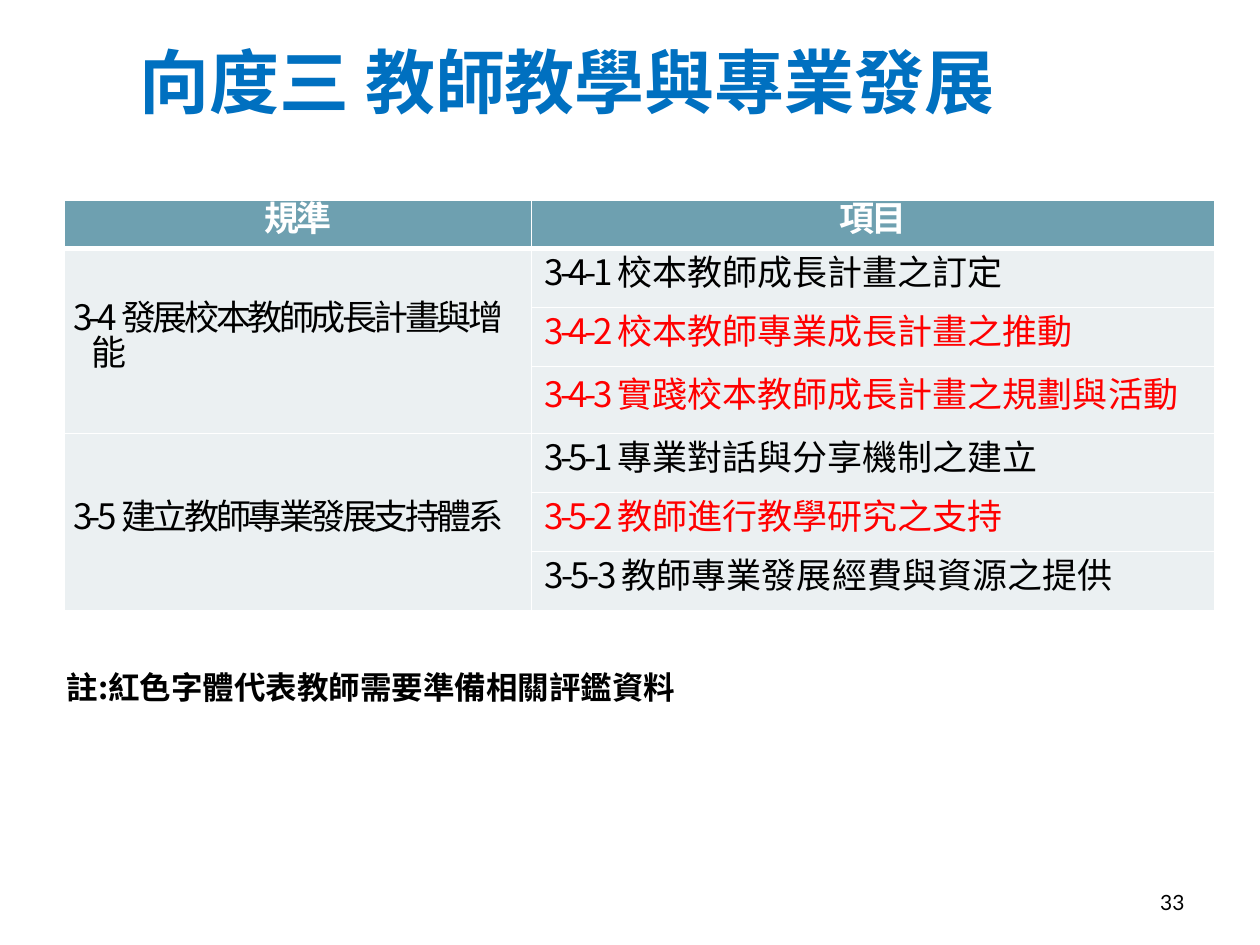
from lxml.etree import SubElement
from pptx import Presentation
from pptx.dml.color import RGBColor
from pptx.enum.text import MSO_ANCHOR, PP_ALIGN
from pptx.oxml.ns import qn
from pptx.util import Inches, Pt

COLORS = {
    "title": "0070C0",
    "header": "6EA0B0",
    "body": "EBF0F2",
    "white": "FFFFFF",
    "black": "000000",
    "red": "FF0000",
}
SANS = "Noto Sans CJK SC"
WIDTH, HEIGHT = 10, 7.5
COLUMN_WIDTHS = (3.71, 5.42)
ROW_HEIGHTS = (0.38, 0.47, 0.47, 0.53, 0.47, 0.47, 0.47)
HEADINGS = ("規準", "項目")
STANDARDS = (
    (("3-4 發展校本教師成長計畫與增", "能"), (
        ("3-4-1 ", "校本教師成長計畫之訂定", "black", -2),
        ("3-4-2 ", "校本教師專業成長計畫之推動", "red", -2),
        ("3-4-3 ", "實踐校本教師成長計畫之規劃與活動", "red", -2),
    )),
    (("3-5 建立教師專業發展支持體系",), (
        ("3-5-1 ", "專業對話與分享機制之建立", "black", -2),
        ("3-5-2 ", "教師進行教學研究之支持", "red", -2),
        ("3-5-3 ", "教師專業發展經費與資源之提供", "black", -1.5),
    )),
)


def add_run(paragraph, text, size, color, bold=False, font=SANS, spacing=0):
    """Append one formatted run to a paragraph."""
    run = paragraph.add_run()
    run.text = text
    run.font.size = Pt(size)
    run.font.bold = bold
    run.font.name = font
    run.font.color.rgb = RGBColor.from_string(COLORS[color])
    properties = run.font._element
    properties.set("spc", str(int(spacing * 100)))
    SubElement(properties, qn("a:ea")).set("typeface", SANS)


def add_label(slide, box, text, align, anchor, **style):
    """Add a one-line text box, placed by shares of the slide's size."""
    left, top, width, height = box
    shape = slide.shapes.add_textbox(
        Inches(left * WIDTH), Inches(top * HEIGHT),
        Inches(width * WIDTH), Inches(height * HEIGHT))
    frame = shape.text_frame
    frame.word_wrap = True
    frame.vertical_anchor = anchor
    paragraph = frame.paragraphs[0]
    paragraph.alignment = align
    add_run(paragraph, text, **style)


def style_cell(cell, fill, margins, bottom=1):
    """Set a cell's white borders, fill, margins and anchor."""
    properties = cell._tc.get_or_add_tcPr()
    for side, width in (("L", 1), ("R", 1), ("T", 1), ("B", bottom)):
        line = SubElement(properties, qn(f"a:ln{side}"), w=str(Pt(width)))
        solid = SubElement(line, qn("a:solidFill"))
        SubElement(solid, qn("a:srgbClr"), val=COLORS["white"])
    cell.fill.solid()
    cell.fill.fore_color.rgb = RGBColor.from_string(COLORS[fill])
    horizontal, vertical = margins
    cell.margin_left = cell.margin_right = Inches(horizontal)
    cell.margin_top = cell.margin_bottom = Inches(vertical)
    cell.vertical_anchor = MSO_ANCHOR.MIDDLE


def format_paragraph(paragraph, align, left=0, first=0):
    """Set alignment, fixed line spacing and indents in inches."""
    paragraph.alignment = align
    paragraph.line_spacing = Pt(20)
    properties = paragraph._p.get_or_add_pPr()
    properties.set("marL", str(Inches(left)))
    properties.set("indent", str(Inches(first)))


def fill_standard(cell, lines):
    """Write a standard, with its later lines indented."""
    for index, text in enumerate(lines):
        frame = cell.text_frame
        paragraph = frame.add_paragraph() if index else frame.paragraphs[0]
        format_paragraph(paragraph, PP_ALIGN.JUSTIFY, left=0.15 if index else 0)
        add_run(paragraph, text, 20, "black", spacing=-2)


def fill_item(cell, number, text, color, spacing):
    """Write an item as a tight number followed by its name."""
    paragraph = cell.text_frame.paragraphs[0]
    format_paragraph(paragraph, PP_ALIGN.JUSTIFY, 0.49, -0.49)
    add_run(paragraph, number, 20, color, spacing=spacing)
    add_run(paragraph, text, 20, color)


def add_standards_table(slide):
    """Add the table of standards and their items."""
    table = slide.shapes.add_table(
        len(ROW_HEIGHTS), len(COLUMN_WIDTHS), Inches(0.51), Inches(1.59),
        Inches(sum(COLUMN_WIDTHS)), Inches(sum(ROW_HEIGHTS))).table
    for column, width in zip(table.columns, COLUMN_WIDTHS):
        column.width = Inches(width)
    for row, height in zip(table.rows, ROW_HEIGHTS):
        row.height = Inches(height)
    for column, heading in enumerate(HEADINGS):
        cell = table.cell(0, column)
        style_cell(cell, "header", (0.1, 0.05), bottom=3)
        paragraph = cell.text_frame.paragraphs[0]
        format_paragraph(paragraph, PP_ALIGN.CENTER)
        add_run(paragraph, heading, 20, "white", bold=True, spacing=-2)
    first = 1
    for lines, items in STANDARDS:
        for row, item in enumerate(items, first):
            style_cell(table.cell(row, 0), "body", (0.07, 0))
            style_cell(table.cell(row, 1), "body", (0.1, 0.05))
            fill_item(table.cell(row, 1), *item)
        fill_standard(table.cell(first, 0), lines)
        table.cell(first, 0).merge(table.cell(first + len(items) - 1, 0))
        first += len(items)


def main():
    """Build and save the slide."""
    presentation = Presentation()
    presentation.slide_width = Inches(WIDTH)
    presentation.slide_height = Inches(HEIGHT)
    slide = presentation.slides.add_slide(presentation.slide_layouts[6])
    add_label(slide, (0, 0, 0.9, 0.17), "向度三 教師教學與專業發展",
              PP_ALIGN.CENTER, MSO_ANCHOR.MIDDLE,
              size=40, color="title", bold=True, font="Times New Roman")
    add_standards_table(slide)
    add_label(slide, (0.043, 0.7, 0.9, 0.05), "註:紅色字體代表教師需要準備相關評鑑資料",
              PP_ALIGN.LEFT, MSO_ANCHOR.TOP, size=18, color="black", bold=True)
    add_label(slide, (0.72, 0.93, 0.23, 0.05), "33",
              PP_ALIGN.RIGHT, MSO_ANCHOR.MIDDLE, size=12, color="black", font="Lato")
    presentation.save("out.pptx")


if __name__ == "__main__":
    main()
